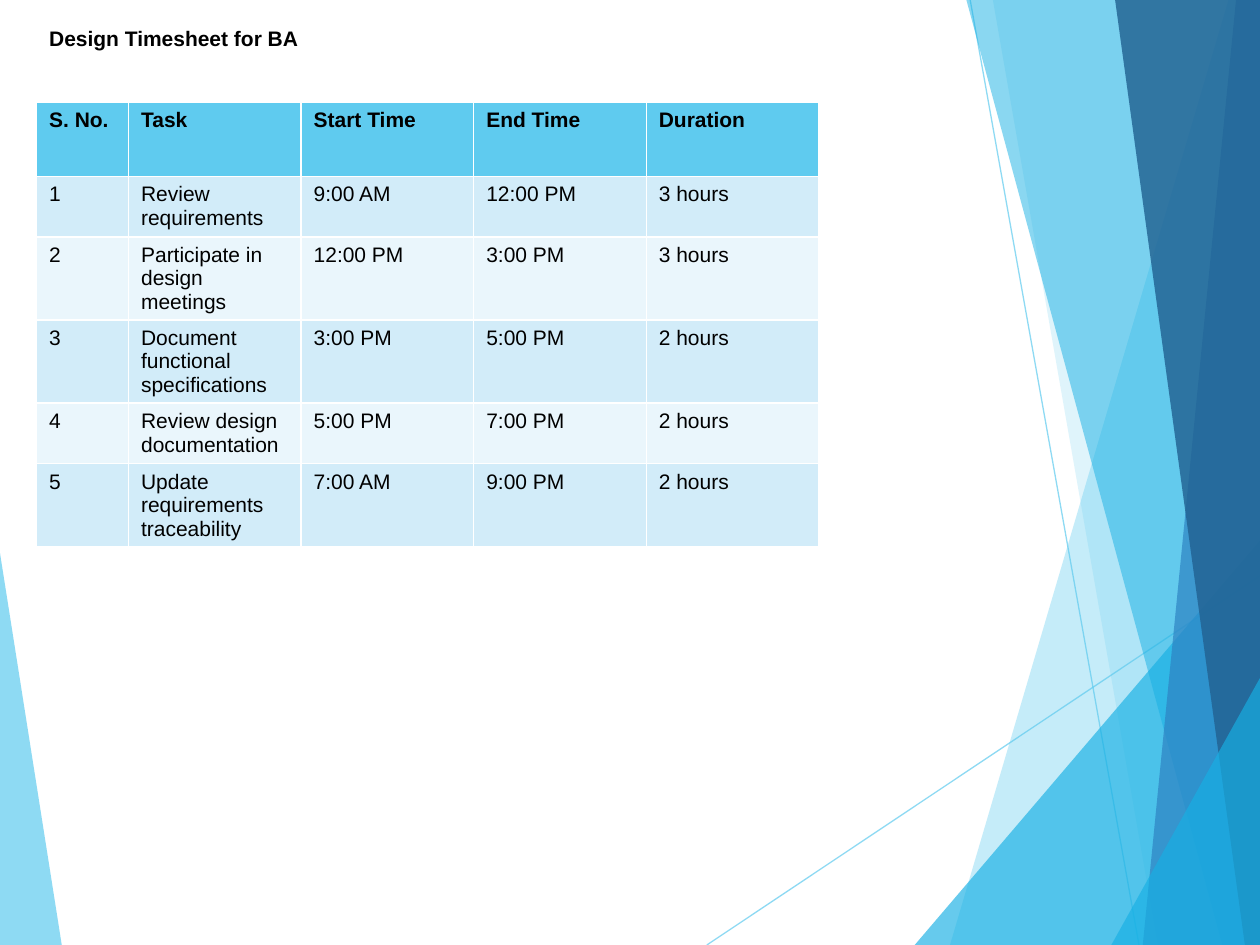
"""Build the design timesheet slide with its faceted blue backdrop."""
from pptx import Presentation
from pptx.dml.color import RGBColor
from pptx.enum.shapes import MSO_CONNECTOR as Connector
from pptx.enum.text import MSO_ANCHOR as Anchor, MSO_AUTO_SIZE as AutoSize, PP_ALIGN as Align
from pptx.oxml.xmlchemy import OxmlElement
from pptx.util import Inches, Pt

SKY = RGBColor(0x5F, 0xCB, 0xEF)
CYAN = RGBColor(0x17, 0xB0, 0xE4)
BLUE = RGBColor(0x2E, 0x83, 0xC3)
NAVY = RGBColor(0x22, 0x62, 0x92)
PALE = RGBColor(0xD2, 0xEC, 0xF9)
PALEST = RGBColor(0xEA, 0xF6, 0xFC)
BLACK = RGBColor(0, 0, 0)

WIDTH, HEIGHT = 10, 7.5
MARGIN = 0.29


def write(frame, text, size=12, bold=False, color=BLACK, font="Arial"):
    para = frame.paragraphs[0]
    para.alignment = Align.LEFT
    span = para.add_run()
    span.text = text
    span.font.name = font
    span.font.size = Pt(size)
    span.font.bold = bold
    span.font.color.rgb = color


def fade(shape, percent):
    for color in shape._element.xpath("./p:spPr//a:srgbClr"):
        alpha = OxmlElement("a:alpha")
        alpha.set("val", str(percent * 1000))
        color.append(alpha)


deck = Presentation()
deck.slide_width, deck.slide_height = Inches(WIDTH), Inches(HEIGHT)
page = deck.slides.add_slide(deck.slide_layouts.get_by_name("Title Only"))

left_facet = [(0, 4.39), (0.49, HEIGHT), (0, HEIGHT)]
lines = [((5.61, HEIGHT), (WIDTH, 4.57)), ((7.7, 0), (9.04, HEIGHT))]
corner = (WIDTH, HEIGHT)
top_corner = (WIDTH, 0)
right_facets = [
    ([(9.75, 0), (7.54, HEIGHT), corner, top_corner], SKY, 36),
    ([(7.88, 0), (9.19, HEIGHT), corner, top_corner], SKY, 20),
    ([(7.26, HEIGHT), (WIDTH, 4.29), corner], CYAN, 66),
    ([(7.67, 0), (9.7, HEIGHT), corner, top_corner], CYAN, 50),
    ([(9.81, 0), (9.07, HEIGHT), corner, top_corner], BLUE, 70),
    ([(8.85, 0), (9.88, HEIGHT), corner, top_corner], NAVY, 82),
    ([(8.82, HEIGHT), (WIDTH, 5.38), corner], CYAN, 66),
]

for start, end in lines:
    line = page.shapes.add_connector(Connector.STRAIGHT, *map(Inches, start + end))
    line.line.color.rgb = SKY
    line.line.width = Pt(0.75)
    line._element.spPr.append(OxmlElement("a:effectLst"))
    fade(line, 70)

for points, color, opacity in [(left_facet, SKY, 70)] + right_facets:
    corners = [(Inches(x), Inches(y)) for x, y in points]
    outline = page.shapes.build_freeform(*corners[0])
    outline.add_line_segments(corners[1:], close=True)
    facet = outline.convert_to_shape()
    facet.shadow.inherit = False
    facet.fill.solid()
    facet.fill.fore_color.rgb = color
    facet.line.fill.background()
    fade(facet, opacity)

title = page.shapes.title
title.left, title.top, title.width, title.height = map(Inches, (MARGIN, 0.15, 7.15, 0.3))
title.text_frame.word_wrap = True
title.text_frame.auto_size = AutoSize.NONE
title.text_frame.vertical_anchor = Anchor.TOP
write(title.text_frame, "Design Timesheet for BA", bold=True)

rows = [
    ("S. No.", "Task", "Start Time", "End Time", "Duration"),
    ("1", "Review requirements", "9:00 AM", "12:00 PM", "3 hours"),
    ("2", "Participate in design meetings", "12:00 PM", "3:00 PM", "3 hours"),
    ("3", "Document functional specifications", "3:00 PM", "5:00 PM", "2 hours"),
    ("4", "Review design documentation", "5:00 PM", "7:00 PM", "2 hours"),
    ("5", "Update requirements traceability", "7:00 AM", "9:00 PM", "2 hours"),
]
column_widths = [0.73] + [1.37] * 4
row_heights = [0.59] + [0.48] * 5
table = page.shapes.add_table(
    len(rows), len(column_widths), Inches(MARGIN), Inches(0.81),
    Inches(sum(column_widths)), Inches(sum(row_heights)),
).table
for column, width in zip(table.columns, column_widths):
    column.width = Inches(width)
for number, (row, height, texts) in enumerate(zip(table.rows, row_heights, rows)):
    row.height = Inches(height)
    is_header = number == 0
    color = SKY if is_header else PALE if number % 2 else PALEST
    for cell, text in zip(row.cells, texts):
        cell.fill.solid()
        cell.fill.fore_color.rgb = color
        write(cell.text_frame, text, bold=is_header)

deck.save("out.pptx")
